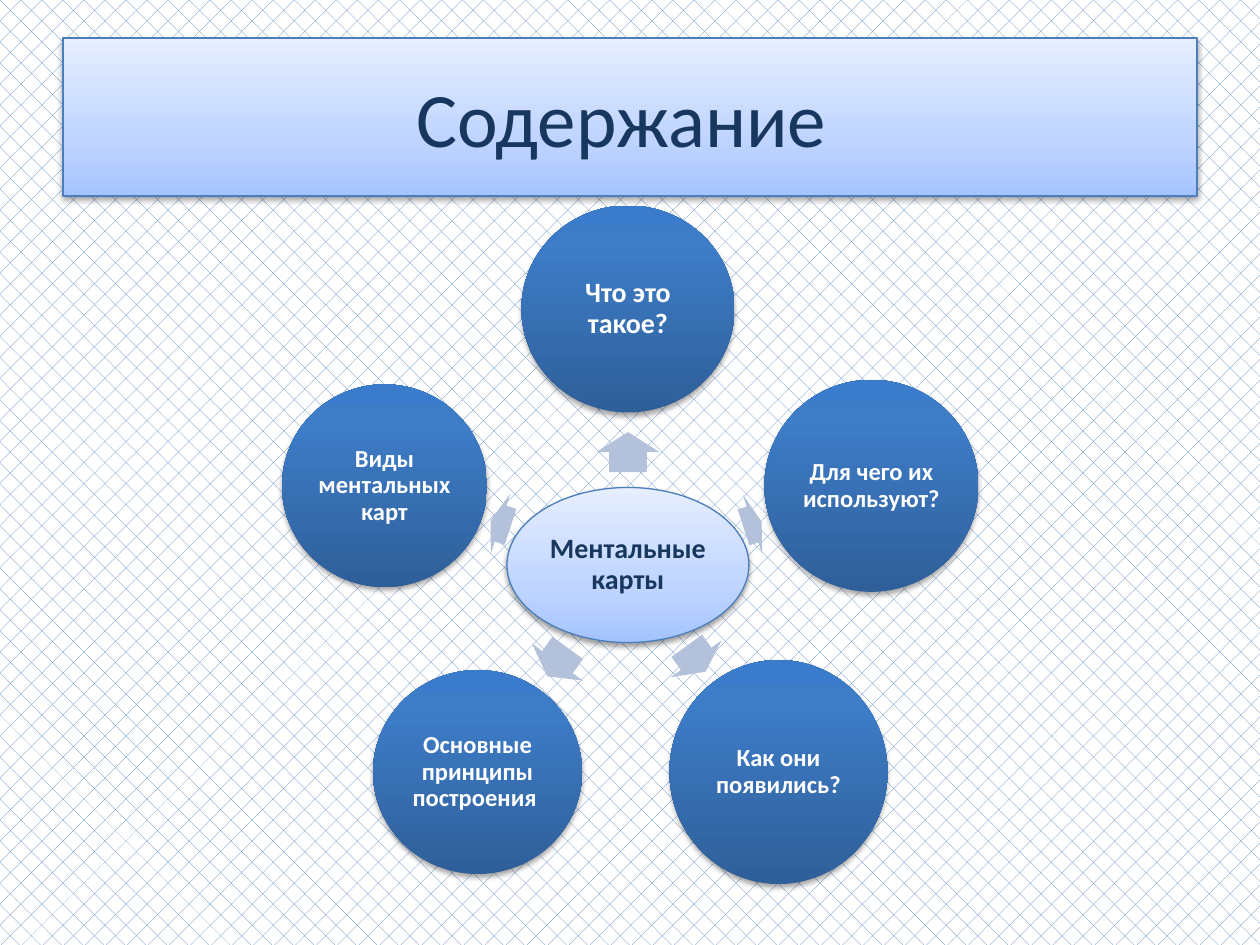
from math import cos, radians, sin

from lxml.etree import SubElement
from pptx import Presentation
from pptx.dml.color import RGBColor
from pptx.enum.dml import MSO_PATTERN
from pptx.enum.shapes import MSO_SHAPE
from pptx.enum.text import MSO_ANCHOR, PP_ALIGN
from pptx.oxml.ns import qn
from pptx.util import Emu, Pt

NAVY = RGBColor(0x17, 0x37, 0x5E)
WHITE = RGBColor(0xFF, 0xFF, 0xFF)
BLUE = RGBColor(0x4F, 0x81, 0xBD)
OUTLINE = RGBColor(0x4B, 0x7E, 0xBC)
ARROW = RGBColor(0xB3, 0xC1, 0xDB)
PALE_STOPS = [(0, RGBColor(0xA4, 0xC4, 0xFF)), (35, RGBColor(0xBF, 0xD4, 0xFF)),
              (100, RGBColor(0xE6, 0xEE, 0xFF))]
DEEP_STOPS = [(0, RGBColor(0x2F, 0x5F, 0x99)), (80, RGBColor(0x3D, 0x7C, 0xC7)),
              (100, RGBColor(0x3A, 0x7C, 0xCB))]
# Gradient stops, outline, text colour, shadow opacity in % and distance in points
PALE = (PALE_STOPS, OUTLINE, NAVY, 38, 1.6)
DEEP = (DEEP_STOPS, None, WHITE, 35, 1.8)

TITLE = "Содержание "
HUB = "Ментальные карты"
# Text, font size, circle width and height, arrow length, arrow distance from the hub
TOPICS = [
    ("Что это такое?", 16, 213, 207, 40, 113),
    ("Для чего их используют?", 14, 214, 212, 19, 131),
    ("Как они появились?", 14, 218, 224, 32, 116),
    ("Основные принципы построения ", 14, 209, 204, 35, 120),
    ("Виды ментальных карт", 14, 205, 203, 21, 134),
]
HUB_CENTER = (628, 565)
HUB_SIZE = (242, 155)
ORBIT = 256
ARROW_WIDTH = 63
PX = 914400 / 126


def px(value):
    return Emu(round(value * PX))


def add_centered(slide, kind, center, size):
    """Add a preset shape around a center point given in px."""
    (x, y), (width, height) = center, size
    shape = slide.shapes.add_shape(
        kind, px(x - width / 2), px(y - height / 2), px(width), px(height))
    shape.shadow.inherit = False
    return shape


def apply_style(shape, style):
    """Set the vertical gradient, outline and drop shadow."""
    stops, outline, _, opacity, distance = style
    shape.fill.gradient()
    shape.fill.gradient_angle = 90
    properties = shape._element.spPr
    stop_list = properties.find(".//" + qn("a:gsLst"))
    stop_list.clear()
    for position, color in stops:
        stop = SubElement(stop_list, qn("a:gs"), pos=str(position * 1000))
        SubElement(stop, qn("a:srgbClr"), val=str(color))
    if outline is None:
        shape.line.fill.background()
    else:
        shape.line.color.rgb = outline
        shape.line.width = Pt(0.75)
    shadow = SubElement(
        properties.find(qn("a:effectLst")), qn("a:outerShdw"), blurRad=str(Pt(3.1)),
        dist=str(Pt(distance)), dir="5400000", rotWithShape="0")
    color = SubElement(shadow, qn("a:srgbClr"), val="000000")
    SubElement(color, qn("a:alpha"), val=str(opacity * 1000))


def set_text(shape, text, size, color, bold):
    frame = shape.text_frame
    frame.word_wrap = True
    frame.vertical_anchor = MSO_ANCHOR.MIDDLE
    paragraph = frame.paragraphs[0]
    paragraph.alignment = PP_ALIGN.CENTER
    run = paragraph.add_run()
    run.text = text
    for name, value in {"name": "Calibri", "size": Pt(size), "bold": bold}.items():
        setattr(run.font, name, value)
    run.font.color.rgb = color


def add_bubble(slide, text, font_size, center, size, style):
    bubble = add_centered(slide, MSO_SHAPE.OVAL, center, size)
    apply_style(bubble, style)
    set_text(bubble, text, font_size, style[2], True)
    for side in ("left", "top", "right", "bottom"):
        setattr(bubble.text_frame, f"margin_{side}", px(2))
    bubble.text_frame.paragraphs[0].line_spacing = 0.9


def add_arrow(slide, center, length, angle):
    arrow = add_centered(slide, MSO_SHAPE.RIGHT_ARROW, center, (length, ARROW_WIDTH))
    arrow.rotation = angle
    arrow.adjustments[0] = 0.6
    arrow.adjustments[1] = 0.5
    arrow.fill.solid()
    arrow.fill.fore_color.rgb = ARROW
    arrow.line.fill.background()


def from_hub(distance, angle):
    x, y = HUB_CENTER
    return x + distance * cos(radians(angle)), y + distance * sin(radians(angle))


def main():
    presentation = Presentation()
    presentation.slide_width, presentation.slide_height = px(1260), px(945)
    slide = presentation.slides.add_slide(presentation.slide_layouts[6])
    background = slide.background.fill
    background.patterned()
    background.pattern = MSO_PATTERN.DOTTED_DIAMOND
    background.fore_color.rgb = BLUE
    background.back_color.rgb = WHITE

    title = add_centered(slide, MSO_SHAPE.RECTANGLE, (630, 117), (1134, 158))
    apply_style(title, PALE)
    set_text(title, TITLE, 44, NAVY, False)

    add_bubble(slide, HUB, 16, HUB_CENTER, HUB_SIZE, PALE)
    for index, (text, font_size, width, height, length, distance) in enumerate(TOPICS):
        angle = (270 + index * 360 / len(TOPICS)) % 360
        add_arrow(slide, from_hub(distance, angle), length, angle)
        add_bubble(slide, text, font_size, from_hub(ORBIT, angle), (width, height), DEEP)

    presentation.save("out.pptx")


if __name__ == "__main__":
    main()
